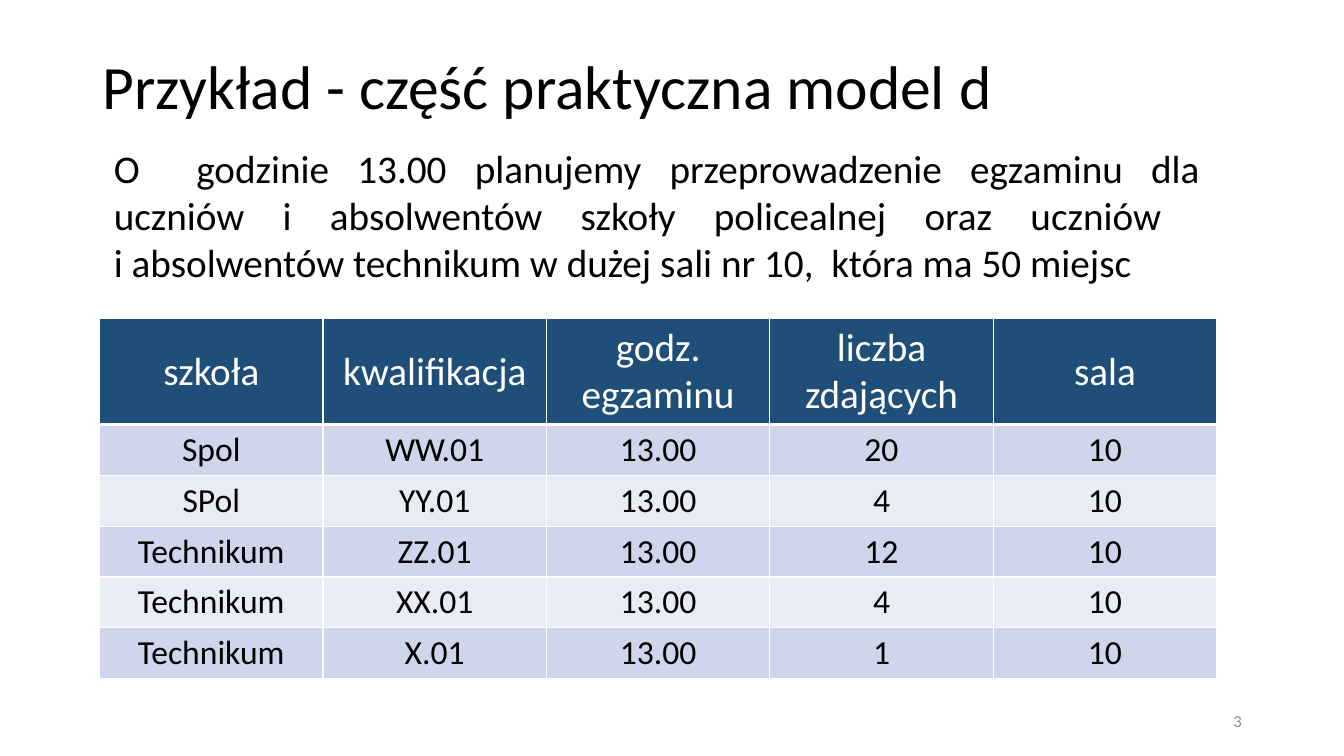
"""Build the slide with the exam example and its table of sessions."""
import pptx
import pptx.util
import pptx.dml.color
import pptx.enum.text
import pptx.oxml
import pptx.oxml.ns

Cm = pptx.util.Cm
Pt = pptx.util.Pt
RGBColor = pptx.dml.color.RGBColor
ALIGN = pptx.enum.text.PP_ALIGN
ANCHOR = pptx.enum.text.MSO_ANCHOR

BLACK = RGBColor(0x00, 0x00, 0x00)
WHITE = RGBColor(0xFF, 0xFF, 0xFF)
GRAY = RGBColor(0x8C, 0x8C, 0x8C)
NAVY = RGBColor(0x1F, 0x4E, 0x79)
BANDS = [RGBColor(0xE9, 0xEB, 0xF5), RGBColor(0xCF, 0xD5, 0xEA)]

TITLE = "Przykład - część praktyczna model d"
BODY = """O  godzinie 13.00 planujemy przeprowadzenie egzaminu dla uczniów i absolwentów szkoły policealnej oraz uczniów 
i absolwentów technikum w dużej sali nr 10,  która ma 50 miejsc """
ROWS = [
    ["szkoła", "kwalifikacja", "godz. egzaminu", "liczba zdających", "sala"],
    ["Spol", "WW.01", "13.00", "20", "10"],
    ["SPol", "YY.01", "13.00", "4", "10"],
    ["Technikum", "ZZ.01", "13.00", "12", "10"],
    ["Technikum", "XX.01", "13.00", "4", "10"],
    ["Technikum", "X.01", "13.00", "1", "10"],
]


def write(frame, text, size, color, align, spacing=None):
    """Put one styled paragraph into a text frame."""
    par = frame.paragraphs[0]
    par.text = text
    par.alignment = align
    par.line_spacing = spacing
    style = {"name": "Calibri", "size": Pt(size), "bold": False}
    for run in par.runs:
        for key, value in style.items():
            setattr(run.font, key, value)
        run.font.color.rgb = color


def edge(cell, side, width):
    """Draw one white border of a cell."""
    line = pptx.oxml.parse_xml(
        f'<a:{side} {pptx.oxml.ns.nsdecls("a")} w="{Pt(width)}">'
        f'<a:solidFill><a:srgbClr val="{WHITE}"/></a:solidFill></a:{side}>')
    cell._tc.get_or_add_tcPr().append(line)


deck = pptx.Presentation()
deck.slide_width = Cm(33.87)
deck.slide_height = Cm(19.05)
slide = deck.slides.add_slide(deck.slide_layouts[6])

texts = [
    ((2.34, 1.24, 29.21, 2.01), ANCHOR.MIDDLE, (TITLE, 44, BLACK, ALIGN.LEFT, 0.9)),
    ((23.93, 17.65, 7.62, 1.02), ANCHOR.MIDDLE, ("3", 12, GRAY, ALIGN.RIGHT)),
    ((2.62, 3.51, 27.86, 3.84), ANCHOR.TOP, (BODY, 28, BLACK, ALIGN.JUSTIFY)),
]
for place, anchor, words in texts:
    box = slide.shapes.add_textbox(*[Cm(part) for part in place])
    form = {"word_wrap": True, "vertical_anchor": anchor}
    for key, value in form.items():
        setattr(box.text_frame, key, value)
    write(box.text_frame, *words)

table = slide.shapes.add_table(
    len(ROWS), len(ROWS[0]), Cm(2.51), Cm(8.03), Cm(28.15), Cm(9.07)).table
for col in table.columns:
    col.width = Cm(5.63)
for r, row in enumerate(ROWS):
    head = r == 0
    table.rows[r].height = Cm(2.67 if head else 1.28)
    for c, text in enumerate(row):
        cell = table.cell(r, c)
        for side in ("lnL", "lnR", "lnT", "lnB"):
            edge(cell, side, 3 if head and side == "lnB" else 1)
        cell.fill.solid()
        cell.fill.fore_color.rgb = NAVY if head else BANDS[r % 2]
        cell.vertical_anchor = ANCHOR.MIDDLE if head else ANCHOR.TOP
        write(cell.text_frame, text, 28 if head else 24,
              WHITE if head else BLACK, ALIGN.CENTER)

deck.save("out.pptx")
